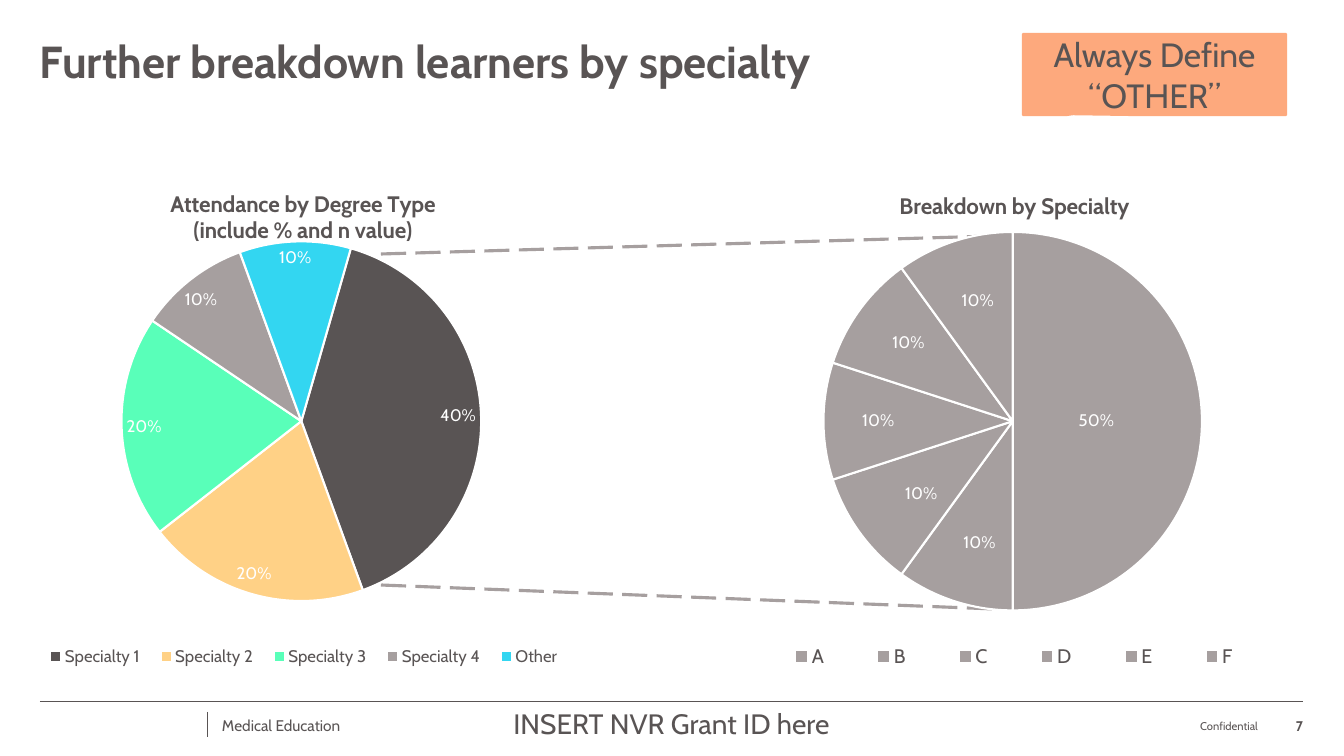
from lxml import etree
from pptx import Presentation
from pptx.chart.data import CategoryChartData
from pptx.dml.color import RGBColor
from pptx.enum.chart import XL_CHART_TYPE, XL_LABEL_POSITION as POS, XL_LEGEND_POSITION
from pptx.enum.dml import MSO_LINE
from pptx.enum.shapes import MSO_CONNECTOR, MSO_SHAPE
from pptx.enum.text import MSO_ANCHOR as ANCHOR, PP_ALIGN as ALIGN
from pptx.oxml.ns import qn
from pptx.util import Emu, Pt

FONT = "Cabin"
COLORS = {"ink": "595454", "gray": "A69F9F", "sand": "FFD186", "mint": "59FFB9",
          "sky": "33D6F1", "peach": "FDA97D", "white": "FFFFFF"}

LINES = [
    ((40, 701), (1303, 701), "ink", 0.5, None),
    ((207, 712), (207, 737), "ink", 0.5, None),
    ((381, 254), (994, 236), "gray", 2.25, MSO_LINE.LONG_DASH),
    ((381, 585), (994, 609), "gray", 2.25, MSO_LINE.LONG_DASH),
]

TEXTS = [
    dict(text="Medical Education", box=(222, 713, 417, 25), size=11, anchor=ANCHOR.MIDDLE),
    dict(text="Confidential", box=(904, 709, 354, 25), size=8, anchor=ANCHOR.BOTTOM,
         align=ALIGN.RIGHT, inset=(0, 0, 0, 1)),
    dict(text="7", box=(1268, 709, 35, 25), size=10, bold=True, anchor=ANCHOR.BOTTOM,
         align=ALIGN.RIGHT),
    dict(text="INSERT NVR Grant ID here", box=(406, 702, 531, 40), size=20,
         align=ALIGN.CENTER, inset=(10, 5, 10, 5)),
    dict(text="Further breakdown learners by specialty", box=(40, 40, 1263, 53), size=32,
         bold=True, spacing=0.9),
]

CALLOUT = dict(text="Always Define “OTHER”", box=(1023, 34, 263, 81), size=24,
               anchor=ANCHOR.MIDDLE, align=ALIGN.CENTER, inset=(20, 10, 20, 10))

PIES = [
    dict(title=["Attendance by Degree Type", "(include % and n value)"],
         box=(28, 171, 550, 504), start=16, position=POS.BEST_FIT,
         legend_size=12, legend=(7, 470, 538, 30), shifts=[],
         slices=[("Specialty 1", 0.4, "ink"), ("Specialty 2", 0.2, "sand"),
                 ("Specialty 3", 0.2, "mint"), ("Specialty 4", 0.1, "gray"),
                 ("Other", 0.1, "sky")]),
    dict(title=["Breakdown by Specialty"],
         box=(725, 171, 579, 504), start=0, position=POS.CENTER,
         legend_size=14, legend=(24, 470, 531, 30),
         shifts=[(-11, 0), (-4, 32), (-15, 17), (-40, 0), (-28, -23), (-6, -30)],
         slices=[("A", 0.5, "gray")] + [(name, 0.1, "gray") for name in "BCDEF"]),
]
PLOT = (0.17, 0.121, 0.654, 0.751)


def px(n):
    return Emu(round(n * 914400 / 100.8))


def color(name):
    return RGBColor.from_string(COLORS[name])


def style(font, size, name="ink", bold=False):
    font.name, font.size, font.bold = FONT, Pt(size), bold
    font.color.rgb = color(name)


def add_line(slide, start, end, name, width, dash):
    c = slide.shapes.add_connector(MSO_CONNECTOR.STRAIGHT, *map(px, start + end))
    c.line.color.rgb = color(name)
    c.line.width = Pt(width)
    if dash:
        c.line.dash_style = dash
    etree.SubElement(c._element.spPr, qn("a:effectLst"))


def write(sp, text, size, bold=False, anchor=ANCHOR.TOP, align=ALIGN.LEFT,
          inset=(0, 0, 0, 0), spacing=None):
    tf = sp.text_frame
    tf.word_wrap = True
    tf.vertical_anchor = anchor
    tf.margin_left, tf.margin_top, tf.margin_right, tf.margin_bottom = map(px, inset)
    p = tf.paragraphs[0]
    p.alignment = align
    if spacing:
        p.line_spacing = spacing
    r = p.add_run()
    r.text = text
    style(r.font, size, bold=bold)


def set_layout(parent, index, values, target=None, edge=True):
    for old in parent.findall(qn("c:layout")):
        parent.remove(old)
    layout = etree.Element(qn("c:layout"))
    manual = etree.SubElement(layout, qn("c:manualLayout"))
    items = [("layoutTarget", target)] if target else []
    if edge:
        items += [("xMode", "edge"), ("yMode", "edge")]
    items += zip("xywh", values)
    for tag, val in items:
        etree.SubElement(manual, qn("c:" + tag)).set("val", str(val))
    parent.insert(index, layout)


def add_pie(slide, title, box, start, position, legend_size, legend, shifts, slices):
    data = CategoryChartData(number_format="0%")
    data.categories = [name for name, _, _ in slices]
    data.add_series("Series 1", [val for _, val, _ in slices])
    chart = slide.shapes.add_chart(XL_CHART_TYPE.PIE, *map(px, box), data).chart
    style(chart.font, 12)
    width, height = box[2:]

    tf = chart.chart_title.text_frame
    for i, line in enumerate(title):
        p = tf.add_paragraph() if i else tf.paragraphs[0]
        r = p.add_run()
        r.text = line
        style(r.font, 16, bold=True)
    chart.chart_title.include_in_layout = False

    chart.has_legend = True
    chart.legend.position = XL_LEGEND_POSITION.BOTTOM
    chart.legend.include_in_layout = False
    style(chart.legend.font, legend_size)
    x, y, w, h = legend
    set_layout(chart.element.find(".//" + qn("c:legend")), 1,
               [round(x / width, 3), round(y / height, 3),
                round(w / width, 3), round(h / height, 3)])

    plot = chart.plots[0]
    plot.vary_by_categories = True
    series = plot.series[0]
    labels = series.data_labels
    labels.show_value = True
    labels.number_format, labels.number_format_is_linked = "0%", False
    labels.position = position
    style(labels.font, 12, "white")
    for i, (_, _, name) in enumerate(slices):
        fmt = series.points[i].format
        fmt.fill.solid()
        fmt.fill.fore_color.rgb = color(name)
        fmt.line.color.rgb = color("white")
        fmt.line.width = Pt(1.5)
    for i, (dx, dy) in enumerate(shifts):
        label = series.points[i].data_label
        style(label.font, 12, "white")
        label.position = position
        dLbl = series._element.findall(".//" + qn("c:dLbl"))[i]
        set_layout(dLbl, 1, [round(dx / width, 3), round(dy / height, 3)], edge=False)

    pie = chart.element.find(".//" + qn("c:pieChart"))
    for old in pie.findall(qn("c:firstSliceAng")):
        pie.remove(old)
    etree.SubElement(pie, qn("c:firstSliceAng")).set("val", str(start))
    set_layout(pie.getparent(), 0, PLOT, target="inner")
    spPr = etree.Element(qn("c:spPr"))
    etree.SubElement(spPr, qn("a:noFill"))
    etree.SubElement(etree.SubElement(spPr, qn("a:ln")), qn("a:noFill"))
    chart.element.find(qn("c:chart")).addnext(spPr)


def main():
    prs = Presentation()
    prs.slide_width, prs.slide_height = px(1344), px(756)
    slide = prs.slides.add_slide(prs.slide_layouts[6])
    for line in LINES:
        add_line(slide, *line)
    for pie in PIES:
        add_pie(slide, **pie)
    for item in TEXTS:
        args = dict(item)
        write(slide.shapes.add_textbox(*map(px, args.pop("box"))), **args)

    args = dict(CALLOUT)
    sp = slide.shapes.add_shape(MSO_SHAPE.RECTANGULAR_CALLOUT, *map(px, args.pop("box")))
    sp.adjustments[0], sp.adjustments[1] = -0.31, 0.49
    sp.shadow.inherit = False
    sp.fill.solid()
    sp.fill.fore_color.rgb = color("peach")
    sp.line.color.rgb = color("peach")
    sp.line.width = Pt(1.5)
    write(sp, **args)
    prs.save("out.pptx")


if __name__ == "__main__":
    main()
